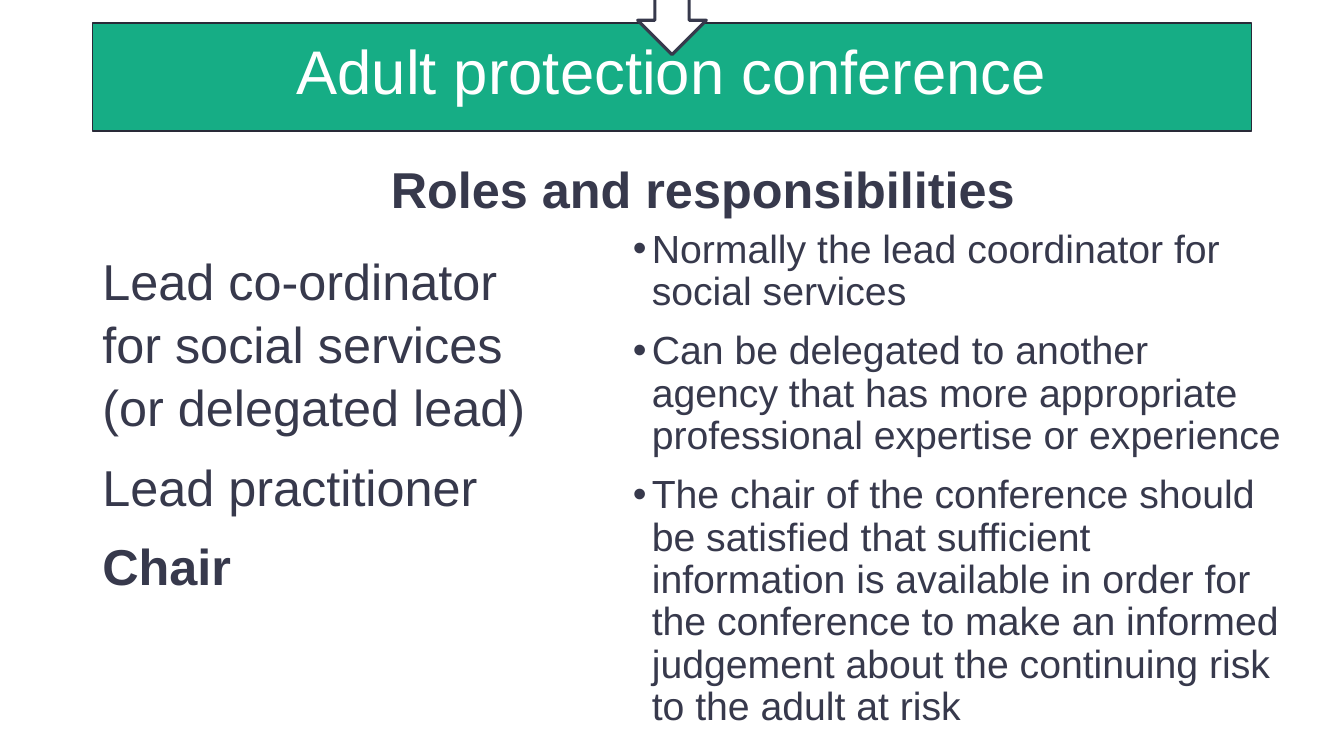
from lxml import etree
from pptx import Presentation
from pptx.dml.color import RGBColor
from pptx.enum.shapes import MSO_SHAPE
from pptx.enum.text import MSO_ANCHOR, PP_ALIGN
from pptx.oxml.ns import qn
from pptx.util import Pt

DOWN_ARROW = MSO_SHAPE.DOWN_ARROW
MIDDLE, TOP = MSO_ANCHOR.MIDDLE, MSO_ANCHOR.TOP
CENTER, LEFT = PP_ALIGN.CENTER, PP_ALIGN.LEFT

TITLE = "Adult protection conference"
SUBTITLE = "Roles and responsibilities"
# text, space after, bold
ROLES = [
    ("Lead co-ordinator for social services", 0, False),
    ("(or delegated lead)", 12, False),
    ("Lead practitioner", 12, False),
    ("Chair", 12, True),
]
CHAIR_DUTIES = [
    "Normally the lead coordinator for social services",
    "Can be delegated to another agency that has more appropriate professional "
    "expertise or experience",
    "The chair of the conference should be satisfied that sufficient information is "
    "available in order for the conference to make an informed judgement about the "
    "continuing risk to the adult at risk",
]

FONT = "Arial"
GREEN, WHITE, INK, EDGE = "16AD85", "FFFFFF", "37394C", "292A38"
SLIDE_W, SLIDE_H = 960, 540
BANNER_W = 828
MARGIN = (SLIDE_W - BANNER_W) / 2
ARROW_W = 49
BULLET_INDENT = 13.5


def rgb(value):
    return RGBColor.from_string(value)


def place(shape, x, y, w, h):
    shape.left, shape.top, shape.width, shape.height = Pt(x), Pt(y), Pt(w), Pt(h)


def paint(shape, fill, line, width):
    shape.fill.solid()
    shape.fill.fore_color.rgb = rgb(fill)
    shape.line.color.rgb = rgb(line)
    shape.line.width = Pt(width)


def add_bullet(p):
    pPr = p._p.get_or_add_pPr()
    pPr.set("marL", str(Pt(BULLET_INDENT)))
    pPr.set("indent", str(-Pt(BULLET_INDENT)))
    etree.SubElement(pPr, qn("a:buFont"), typeface=FONT)
    etree.SubElement(pPr, qn("a:buChar"), char="•")


def add_text(tf, text, size=36, color=INK, bold=False, align=LEFT,
             spacing=1.0, after=0, bullet=False):
    """Fill the first paragraph if it is empty, otherwise append one."""
    p = tf.paragraphs[0]
    if p.runs:
        p = tf.add_paragraph()
    p.alignment = align
    p.line_spacing = spacing
    p.space_before, p.space_after = Pt(0), Pt(after)
    if bullet:
        add_bullet(p)
    r = p.add_run()
    r.text = text
    r.font.name, r.font.size, r.font.bold = FONT, Pt(size), bold
    r.font.color.rgb = rgb(color)


def add_box(s, x, y, w, h):
    tf = s.shapes.add_textbox(Pt(x), Pt(y), Pt(w), Pt(h)).text_frame
    tf.word_wrap = True
    tf.vertical_anchor = TOP
    return tf


def add_banner(s):
    banner = s.shapes.title
    place(banner, MARGIN, 16.5, BANNER_W, 77)
    geom = etree.SubElement(banner._element.spPr, qn("a:prstGeom"), prst="roundRect")
    etree.SubElement(geom, qn("a:avLst"))
    paint(banner, GREEN, EDGE, 1)
    banner.text_frame.vertical_anchor = MIDDLE
    add_text(banner.text_frame, TITLE, size=44, color=WHITE, align=CENTER, spacing=0.8)


def add_arrow(s):
    arrow = s.shapes.add_shape(DOWN_ARROW, Pt((SLIDE_W - ARROW_W) / 2), Pt(-33),
                               Pt(ARROW_W), Pt(72))
    arrow.shadow.inherit = False
    paint(arrow, WHITE, INK, 2.25)


def main():
    prs = Presentation()
    prs.slide_width, prs.slide_height = Pt(SLIDE_W), Pt(SLIDE_H)
    s = prs.slides.add_slide(prs.slide_layouts[5])
    add_banner(s)
    add_arrow(s)

    add_text(add_box(s, 80, 114, 844.5, 47), SUBTITLE, bold=True, align=CENTER,
             spacing=0.9, after=6)

    tf = add_box(s, MARGIN, 173.5, 342, 250)
    for text, after, bold in ROLES:
        add_text(tf, text, bold=bold, spacing=1.04, after=after)

    tf = add_box(s, 445, 160.5, 480, 410)
    for text in CHAIR_DUTIES:
        add_text(tf, text, size=28, spacing=0.9, after=12, bullet=True)

    prs.save("out.pptx")


if __name__ == "__main__":
    main()
